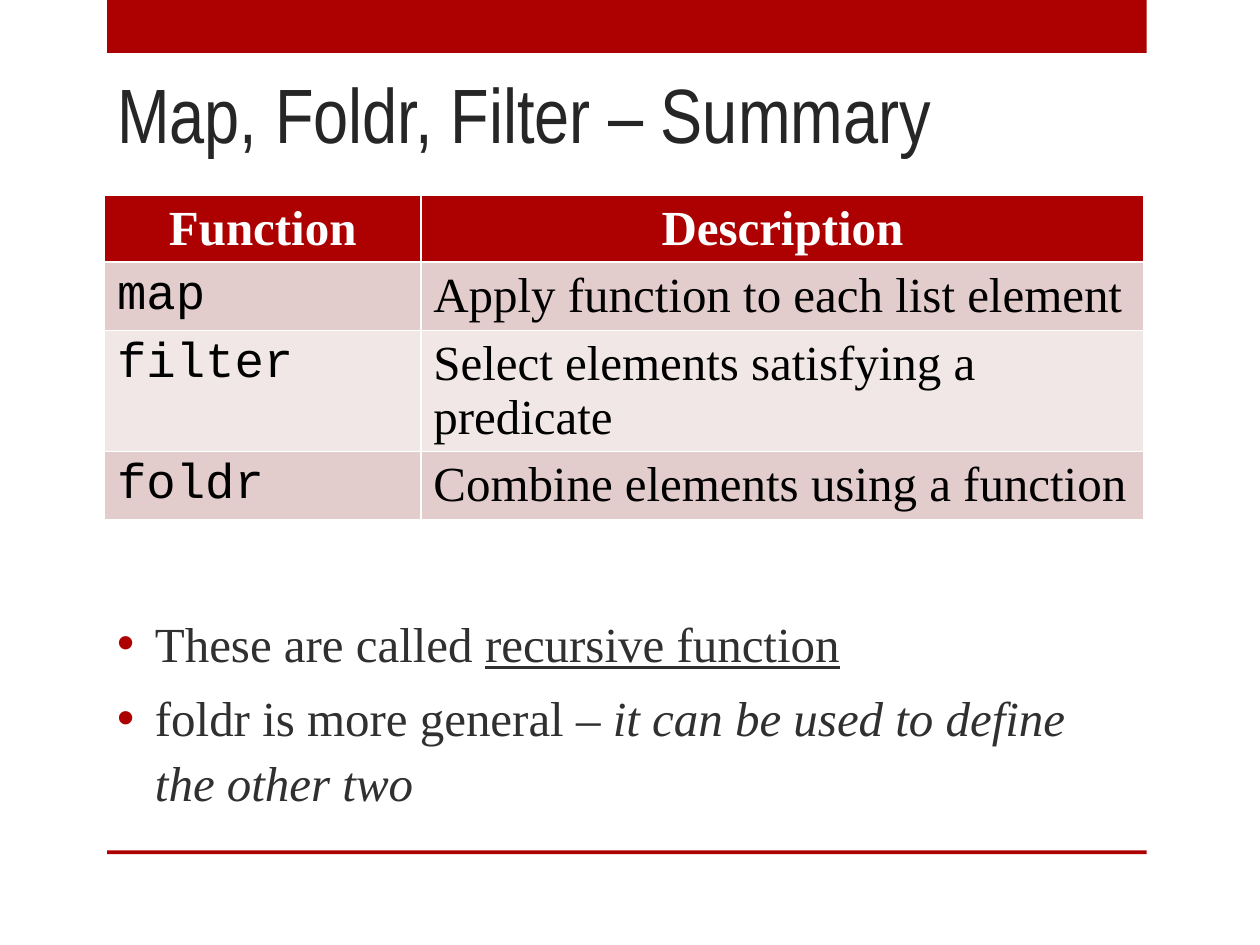
"""Build the summary slide on map, foldr and filter."""
from lxml.etree import SubElement
from pptx import Presentation
from pptx.dml.color import RGBColor
from pptx.enum.shapes import MSO_SHAPE
from pptx.enum.text import MSO_ANCHOR, MSO_AUTO_SIZE, PP_ALIGN
from pptx.oxml.ns import qn
from pptx.util import Inches, Pt

RED = RGBColor(0xAD, 0x01, 0x01)
WHITE = RGBColor(0xFF, 0xFF, 0xFF)
BLACK = RGBColor(0x00, 0x00, 0x00)
TITLE_GRAY = RGBColor(0x26, 0x26, 0x26)
BODY_GRAY = RGBColor(0x30, 0x30, 0x30)
BAND_DARK = RGBColor(0xE3, 0xCC, 0xCC)
BAND_LIGHT = RGBColor(0xF1, 0xE7, 0xE7)

SERIF, MONO, NARROW = "Times New Roman", "Courier New", "Arial Narrow"

TITLE = "Map, Foldr, Filter – Summary"
FUNCTIONS = [
    ("Function", "Description"),
    ("map", "Apply function to each list element"),
    ("filter", "Select elements satisfying a predicate"),
    ("foldr", "Combine elements using a function"),
]
REMARKS = [
    [("These are called ", ""), ("recursive function", "underline")],
    [("foldr is more general – ", ""),
     ("it can be used to define the other two", "italic")],
]

BARS = [(0, 0.42), (6.75, 0.03)]
LEFT, WIDTH = 0.83, 8.25
COLUMN_WIDTHS = [2.51, 5.74]
ROW_HEIGHT = 0.41


def style(paragraph, face, size, color):
    paragraph.font.name = face
    paragraph.font.size = Pt(size)
    paragraph.font.color.rgb = color


def place(part, left, top, width, height):
    part.left, part.top = Inches(left), Inches(top)
    part.width, part.height = Inches(width), Inches(height)


def add_bullet(paragraph):
    properties = paragraph._p.get_or_add_pPr()
    properties.set("marL", str(Inches(0.3)))
    properties.set("indent", str(-Inches(0.3)))
    bullet_color = SubElement(properties, qn("a:buClr"))
    SubElement(bullet_color, qn("a:srgbClr"), val=str(RED))
    SubElement(properties, qn("a:buFont"), typeface="Arial")
    SubElement(properties, qn("a:buChar"), char="•")


def add_bars(slide):
    for top, height in BARS:
        bar = slide.shapes.add_shape(
            MSO_SHAPE.RECTANGLE, Inches(0.85), Inches(top), Inches(WIDTH), Inches(height))
        bar.shadow.inherit = False
        bar.fill.solid()
        bar.fill.fore_color.rgb = RED
        bar.line.fill.background()


def fill_title(title):
    place(title, LEFT, 0.44, 8.33, 0.87)
    frame = title.text_frame
    frame.text = TITLE
    frame.auto_size = MSO_AUTO_SIZE.NONE
    frame.vertical_anchor = MSO_ANCHOR.BOTTOM
    heading = frame.paragraphs[0]
    heading.alignment = PP_ALIGN.LEFT
    style(heading, NARROW, 44, TITLE_GRAY)


def fill_remarks(body):
    place(body, LEFT, 4.77, WIDTH, 1.73)
    frame = body.text_frame
    frame.auto_size = MSO_AUTO_SIZE.NONE
    frame.vertical_anchor = MSO_ANCHOR.TOP
    for index, remark in enumerate(REMARKS):
        paragraph = frame.add_paragraph() if index else frame.paragraphs[0]
        paragraph.line_spacing = 1.1
        paragraph.space_before = Pt(5.6)
        add_bullet(paragraph)
        style(paragraph, SERIF, 28, BODY_GRAY)
        for words, emphasis in remark:
            run = paragraph.add_run()
            run.text = words
            if emphasis:
                setattr(run.font, emphasis, True)


def add_functions(slide):
    table = slide.shapes.add_table(
        len(FUNCTIONS), len(COLUMN_WIDTHS), Inches(LEFT), Inches(1.55),
        Inches(WIDTH), Inches(ROW_HEIGHT * len(FUNCTIONS))).table
    for column, width in zip(table.columns, COLUMN_WIDTHS):
        column.width = Inches(width)
    for r, entries in enumerate(FUNCTIONS):
        header = r == 0
        band = RED if header else BAND_DARK if r % 2 else BAND_LIGHT
        for c, words in enumerate(entries):
            cell = table.cell(r, c)
            cell.fill.solid()
            cell.fill.fore_color.rgb = band
            cell.text = words
            paragraph = cell.text_frame.paragraphs[0]
            paragraph.alignment = PP_ALIGN.CENTER if header else PP_ALIGN.LEFT
            face = SERIF if header or c else MONO
            style(paragraph, face, 28, WHITE if header else BLACK)
            paragraph.font.bold = header


def main():
    deck = Presentation()
    deck.slide_width, deck.slide_height = Inches(10), Inches(7.5)
    slide = deck.slides.add_slide(deck.slide_layouts[1])
    add_bars(slide)
    fill_title(slide.shapes.title)
    fill_remarks(slide.placeholders[1])
    add_functions(slide)
    deck.save("out.pptx")


if __name__ == "__main__":
    main()
